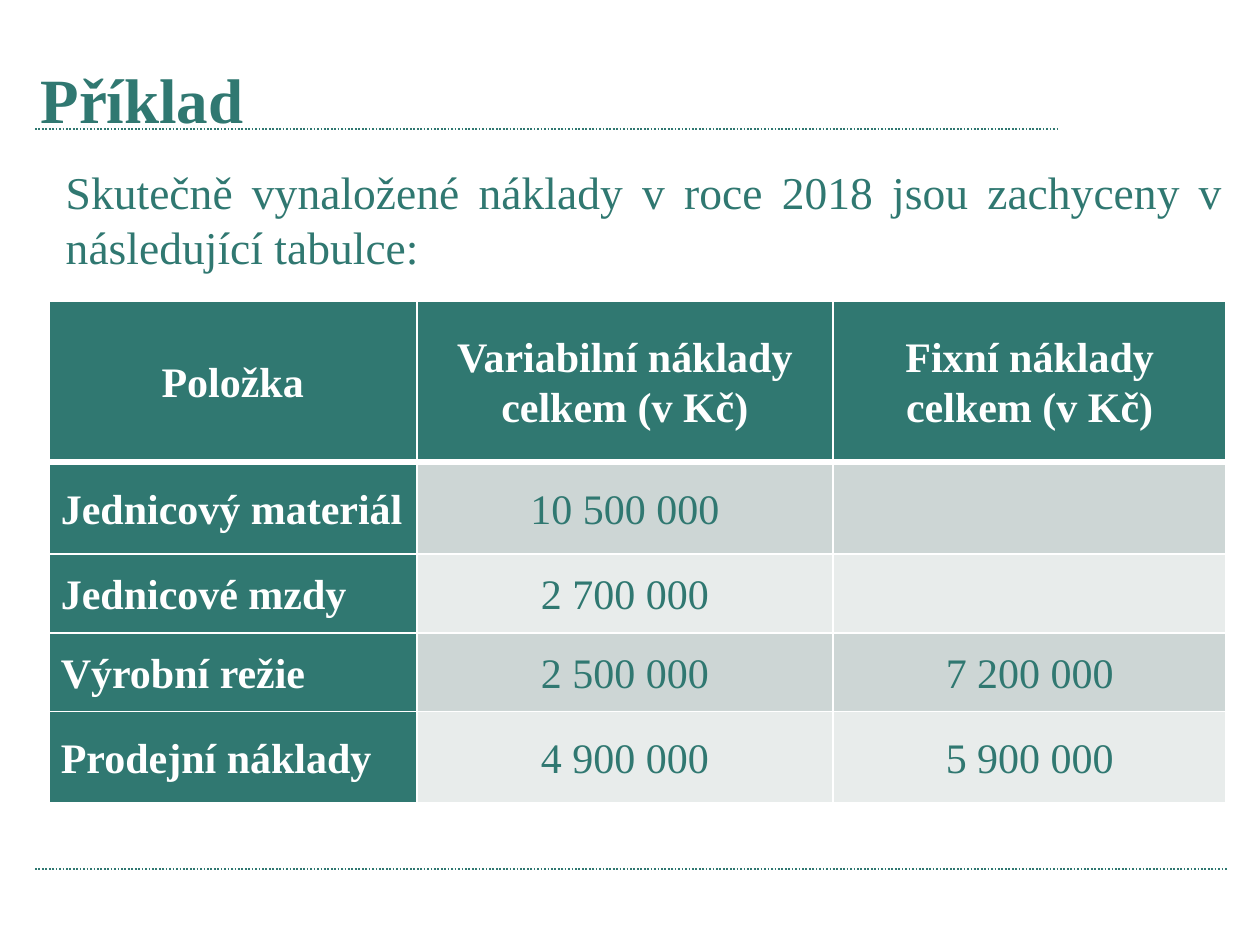
from pptx import Presentation
from pptx.dml.color import RGBColor
from pptx.enum.dml import MSO_LINE_DASH_STYLE as DASH
from pptx.enum.shapes import MSO_CONNECTOR
from pptx.enum.text import MSO_ANCHOR, MSO_AUTO_SIZE, PP_ALIGN
from pptx.oxml.ns import qn
from pptx.util import Cm, Pt
from lxml.etree import SubElement

THEME = {
    "font": "Times New Roman",
    "green": RGBColor.from_string("307871"),
    "white": RGBColor.from_string("FFFFFF"),
    "bands": [RGBColor.from_string("CDD6D5"), RGBColor.from_string("E8ECEB")],
    "title": Pt(27),
    "body": Pt(19.5),
    "table": Pt(18),
}


def apply_format(target, values):
    for name, value in values.items():
        setattr(target, name, value)


def format_text(paragraph, size, color, bold, **layout):
    apply_format(paragraph, layout)
    apply_format(paragraph.font, {"name": THEME["font"], "size": size, "bold": bold})
    paragraph.font.color.rgb = color


presentation = Presentation()
apply_format(presentation, {"slide_width": Cm(19.05), "slide_height": Cm(14.29)})
slide = presentation.slides.add_slide(presentation.slide_layouts[1])

for right, y in [(15.98, 1.95), (18.57, 13.14)]:
    rule = slide.shapes.add_connector(MSO_CONNECTOR.STRAIGHT, Cm(0.53), Cm(y), Cm(right), Cm(y))
    rule.line.color.rgb = THEME["green"]
    apply_format(rule.line, {"width": Pt(0.75), "dash_style": DASH.ROUND_DOT})
    SubElement(rule.element.spPr, qn("a:effectLst"))

title = slide.shapes.title
apply_format(title, {"left": Cm(0.36), "top": Cm(0.74), "width": Cm(16.79), "height": Cm(1.5)})
apply_format(title.text_frame, {
    "text": "Příklad", "vertical_anchor": MSO_ANCHOR.MIDDLE, "auto_size": MSO_AUTO_SIZE.NONE,
})
format_text(title.text_frame.paragraphs[0], THEME["title"], THEME["green"], True,
            alignment=PP_ALIGN.LEFT)

body = slide.placeholders[1]
apply_format(body, {"left": Cm(0.74), "top": Cm(2.36), "width": Cm(18.01), "height": Cm(8.28)})
apply_format(body.text_frame, {
    "text": "Skutečně vynaložené náklady v roce 2018 jsou zachyceny v následující tabulce:",
    "auto_size": MSO_AUTO_SIZE.NONE,
})
intro = body.text_frame.paragraphs[0]
properties = intro._p.get_or_add_pPr()
properties.set("marL", "0")
properties.set("indent", "0")
SubElement(properties, qn("a:buNone"))
format_text(intro, THEME["body"], THEME["green"], False,
            alignment=PP_ALIGN.JUSTIFY, space_before=Pt(0))

costs = [
    ["Položka", "Variabilní náklady celkem (v Kč)", "Fixní náklady celkem (v Kč)"],
    ["Jednicový materiál", "10 500 000", ""],
    ["Jednicové mzdy", "2 700 000", ""],
    ["Výrobní režie", "2 500 000", "7 200 000"],
    ["Prodejní náklady", "4 900 000", "5 900 000"],
]
column_widths = [5.56, 6.3, 5.94]
row_heights = [2.44, 1.39, 1.19, 1.19, 1.39]

table = slide.shapes.add_table(
    len(costs), len(column_widths), Cm(0.74), Cm(4.55),
    Cm(sum(column_widths)), Cm(sum(row_heights)),
).table
for column, width in zip(table.columns, column_widths):
    column.width = Cm(width)
for row, height in zip(table.rows, row_heights):
    row.height = Cm(height)

for row_index, values in enumerate(costs):
    for column_index, value in enumerate(values):
        is_header = row_index == 0
        is_label = is_header or column_index == 0
        cell = table.cell(row_index, column_index)
        apply_format(cell, {
            "text": value, "vertical_anchor": MSO_ANCHOR.MIDDLE,
            "margin_left": Cm(0.18), "margin_right": Cm(0.18),
            "margin_top": 0, "margin_bottom": 0,
        })
        format_text(
            cell.text_frame.paragraphs[0], THEME["table"],
            THEME["white"] if is_label else THEME["green"], is_label,
            alignment=PP_ALIGN.CENTER if is_header or column_index else PP_ALIGN.LEFT,
            line_spacing=1.07,
        )
        cell_properties = cell._tc.get_or_add_tcPr()
        for side in ("lnL", "lnR", "lnT", "lnB"):
            thick = (side == "lnB" and is_header) or (side == "lnT" and row_index == 1)
            border = SubElement(cell_properties, qn(f"a:{side}"), w=str(Pt(3 if thick else 1)))
            border_fill = SubElement(border, qn("a:solidFill"))
            SubElement(border_fill, qn("a:srgbClr"), val=str(THEME["white"]))
        cell.fill.solid()
        cell.fill.fore_color.rgb = THEME["green"] if is_label else THEME["bands"][(row_index - 1) % 2]

presentation.save("out.pptx")
